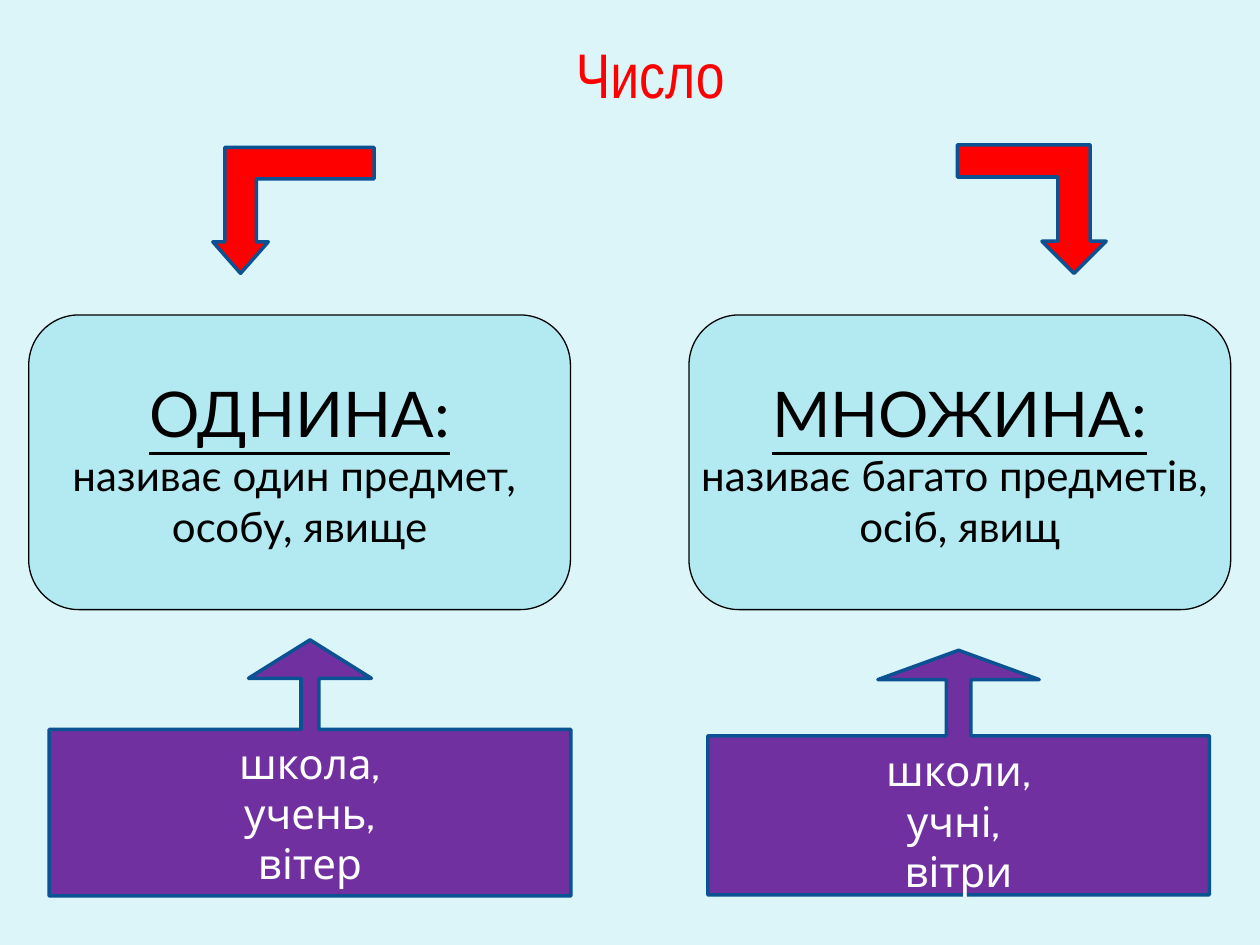
from pptx import Presentation
from pptx import util as u
from pptx.dml.color import RGBColor
from pptx.enum import shapes, text

SKY = RGBColor(0xDB, 0xF5, 0xF9)
AQUA = RGBColor(0xB3, 0xEA, 0xF2)
RED = RGBColor(0xFF, 0, 0)
PURPLE = RGBColor(0x70, 0x30, 0xA0)
NAVY = RGBColor(0x0B, 0x52, 0x92)
BLACK = RGBColor(0, 0, 0)
WHITE = RGBColor(0xFF, 0xFF, 0xFF)

HEADING = {"name": "Lato", "size": u.Pt(36), "underline": True}
MEANING = {"name": "Lato", "size": u.Pt(24)}
EXAMPLE = {"name": "Cabin", "size": u.Pt(24)}
TITLE = {"name": "Arial Narrow", "size": u.Pt(36)}

NUMBERS = [
    {
        "meaning": [("ОДНИНА:", HEADING), ("називає один предмет, ", MEANING),
                    ("особу, явище", MEANING)],
        "card": (0.58, 6.35, 10.92, 5.94),
        "examples": ["школа,", "учень,", "вітер"],
        "callout": (0.99, 12.9, 10.52, 5.16),
        "callout_shape": (0.07, 0.24, 0.15, 0.65),
        "insets": (0.13, 0.13),
        "arrow": (4.29, 2.97, 3.25, 2.54),
        "arrow_shape": (0.25, 0.22, 0.25),
        "mirrored": False,
    },
    {
        "meaning": [("МНОЖИНА:", HEADING), ("називає багато предметів, ", MEANING),
                    ("осіб, явищ", MEANING)],
        "card": (13.89, 6.35, 10.92, 5.94),
        "examples": ["школи,", "учні, ", "вітри"],
        "callout": (14.27, 13.11, 10.11, 4.93),
        "callout_shape": (0.1, 0.33, 0.12, 0.65),
        "insets": (0.2, 0),
        "arrow": (19.3, 2.92, 3, 2.59),
        "arrow_shape": (0.25, 0.25, 0.25),
        "mirrored": True,
    },
]


def write(box, lines, color, wrap, anchor=text.MSO_ANCHOR.MIDDLE):
    frame = box.text_frame
    frame.word_wrap = wrap
    frame.auto_size = text.MSO_AUTO_SIZE.NONE
    frame.vertical_anchor = anchor
    for index, (words, style) in enumerate(lines):
        para = frame.paragraphs[0] if index == 0 else frame.add_paragraph()
        para.alignment = text.PP_ALIGN.CENTER
        span = para.add_run()
        span.text = words
        for key, value in style.items():
            setattr(span.font, key, value)
        span.font.color.rgb = color


def add_box(page, kind, place, adjustments, fill, line, width):
    box = page.shapes.add_shape(kind, *map(u.Cm, place))
    for index, value in enumerate(adjustments):
        box.adjustments[index] = value
    box.shadow.inherit = False
    box.fill.solid()
    box.fill.fore_color.rgb = fill
    box.line.color.rgb = line
    box.line.width = u.Pt(width)
    return box


def main():
    deck = Presentation()
    deck.slide_width, deck.slide_height = u.Cm(25.4), u.Cm(19.05)
    page = deck.slides.add_slide(deck.slide_layouts[5])
    page.background.fill.solid()
    page.background.fill.fore_color.rgb = SKY

    title = page.shapes.title
    title.left, title.top, title.width, title.height = map(u.Cm, (7.75, 0.58, 10.72, 2.97))
    write(title, [("Число", TITLE)], RED, False, text.MSO_ANCHOR.TOP)

    kinds = shapes.MSO_SHAPE
    for number in NUMBERS:
        card = add_box(page, kinds.ROUNDED_RECTANGLE, number["card"], [0.17], AQUA, BLACK, 0.75)
        write(card, number["meaning"], BLACK, False)

        arrow = add_box(page, kinds.BENT_UP_ARROW, number["arrow"], number["arrow_shape"],
                        RED, NAVY, 2)
        arrow.rotation = 180
        if number["mirrored"]:
            arrow._element.spPr.xfrm.set("flipH", "1")

        callout = add_box(page, kinds.UP_ARROW_CALLOUT, number["callout"],
                          number["callout_shape"], PURPLE, NAVY, 2)
        write(callout, [(word, EXAMPLE) for word in number["examples"]], WHITE, True)
        top, bottom = number["insets"]
        callout.text_frame.margin_top = u.Cm(top)
        callout.text_frame.margin_bottom = u.Cm(bottom)

    deck.save("out.pptx")


if __name__ == "__main__":
    main()
